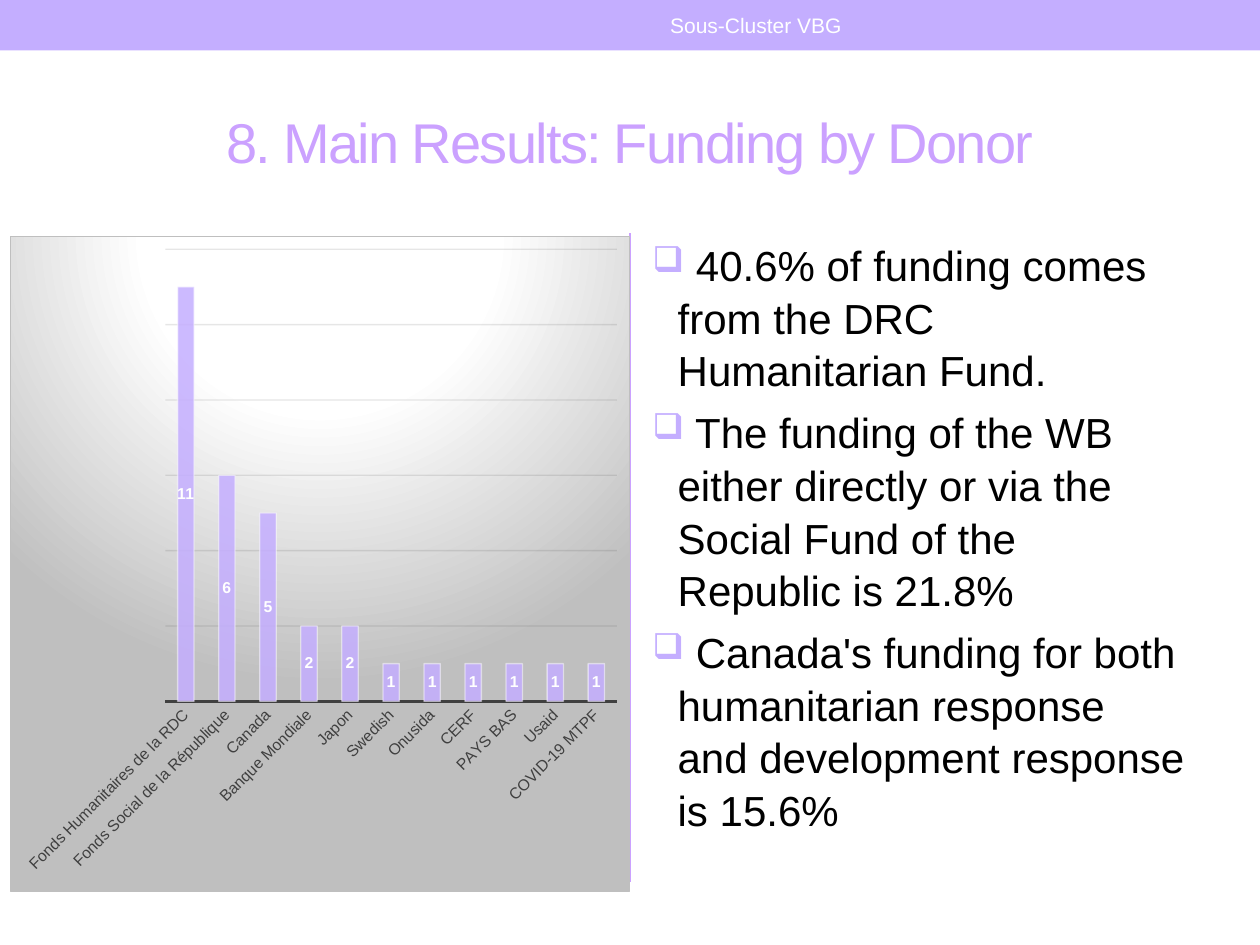
from lxml import etree
from pptx import Presentation
from pptx.chart.data import CategoryChartData
from pptx.dml.color import RGBColor
from pptx.enum.chart import XL_CHART_TYPE, XL_LABEL_POSITION, XL_TICK_MARK
from pptx.enum.shapes import MSO_CONNECTOR, MSO_SHAPE
from pptx.enum.text import MSO_ANCHOR, PP_ALIGN
from pptx.oxml import parse_xml
from pptx.oxml.ns import nsdecls, qn
from pptx.util import Inches, Pt

STACKED = XL_CHART_TYPE.COLUMN_STACKED
LABEL_CENTER = XL_LABEL_POSITION.CENTER
NO_TICK = XL_TICK_MARK.NONE
STRAIGHT = MSO_CONNECTOR.STRAIGHT
RECTANGLE = MSO_SHAPE.RECTANGLE
TOP, MIDDLE = MSO_ANCHOR.TOP, MSO_ANCHOR.MIDDLE
LEFT, CENTER = PP_ALIGN.LEFT, PP_ALIGN.CENTER

FONT = "Arial"
LILAC = RGBColor(0xC4, 0xAE, 0xFF)
VIOLET = RGBColor(0xCB, 0xA1, 0xFF)
WHITE = RGBColor(0xFF, 0xFF, 0xFF)
BLACK = RGBColor(0, 0, 0)
DARK_GREY = RGBColor(0x40, 0x40, 0x40)
GRID_GREY = RGBColor(0x0D, 0x0D, 0x0D)
SILVER = RGBColor(0xBF, 0xBF, 0xBF)

HEADER = "Sous-Cluster VBG"
TITLE = "8. Main Results: Funding by Donor"
FINDINGS = [
    " 40.6% of funding comes from the DRC Humanitarian Fund.",
    " The funding of the WB either directly or via the Social Fund of the Republic is 21.8%",
    " Canada's funding for both humanitarian response and development response is 15.6%",
]
DONORS = [
    ("Fonds Humanitaires de la RDC", 11),
    ("Fonds Social de la République", 6),
    ("Canada", 5),
    ("Banque Mondiale", 2),
    ("Japon", 2),
    ("Swedish", 1),
    ("Onusida", 1),
    ("CERF", 1),
    ("PAYS BAS", 1),
    ("Usaid", 1),
    ("COVID-19 MTPF", 1),
]
PLOT_LAYOUT = {"x": 0.25, "y": 0.02, "w": 0.73, "h": 0.69}


def set_font(font, size, color, bold=False):
    font.name, font.size, font.bold = FONT, Pt(size), bold
    font.color.rgb = color


def set_line(line, color, width):
    line.color.rgb = color
    line.width = Pt(width)


def set_alpha(properties, percent):
    color = properties.find(".//" + qn("a:srgbClr"))
    etree.SubElement(color, qn("a:alpha"), val=str(percent * 1000))


def add_text(page, area, texts, size, color, align=CENTER, anchor=MIDDLE):
    box = page.shapes.add_textbox(*map(Inches, area))
    frame = box.text_frame
    frame.word_wrap = True
    frame.vertical_anchor = anchor
    for index, text in enumerate(texts):
        para = frame.paragraphs[0] if index == 0 else frame.add_paragraph()
        para.alignment = align
        span = para.add_run()
        span.text = text
        set_font(span.font, size, color)
    return frame


def add_bullet(para):
    para.space_before = Pt(4.8)
    para.line_spacing = 1.05
    properties = para._p.get_or_add_pPr()
    properties.set("marL", str(Inches(0.2)))
    properties.set("indent", str(-Inches(0.2)))
    color = etree.SubElement(properties, qn("a:buClr"))
    etree.SubElement(color, qn("a:srgbClr"), val=str(LILAC))
    etree.SubElement(properties, qn("a:buSzPct"), val="85000")
    etree.SubElement(properties, qn("a:buChar"), char="❑")


def style_chart_area(chart):
    background = parse_xml(
        f'<c:spPr {nsdecls("c", "a")}><a:gradFill><a:gsLst>'
        f'<a:gs pos="0"><a:srgbClr val="{WHITE}"/></a:gs>'
        f'<a:gs pos="39000"><a:srgbClr val="{WHITE}"/></a:gs>'
        f'<a:gs pos="100000"><a:srgbClr val="{SILVER}"/></a:gs></a:gsLst>'
        '<a:path path="circle"><a:fillToRect l="50000" t="-80000" r="50000" b="180000"/></a:path>'
        f'</a:gradFill><a:ln w="{Pt(0.75)}"><a:solidFill><a:srgbClr val="{SILVER}"/>'
        '</a:solidFill></a:ln></c:spPr>'
    )
    chart_node = chart._chartSpace.find(qn("c:chart"))
    chart_node.addnext(background)

    plot_area = chart_node.find(qn("c:plotArea"))
    for old_layout in plot_area.findall(qn("c:layout")):
        plot_area.remove(old_layout)
    layout = etree.Element(qn("c:layout"))
    manual = etree.SubElement(layout, qn("c:manualLayout"))
    etree.SubElement(manual, qn("c:layoutTarget"), val="inner")
    for mode in ("xMode", "yMode"):
        etree.SubElement(manual, qn(f"c:{mode}"), val="edge")
    for side, share in PLOT_LAYOUT.items():
        etree.SubElement(manual, qn(f"c:{side}"), val=str(share))
    plot_area.insert(0, layout)


def add_donor_chart(page):
    data = CategoryChartData()
    data.categories = [name for name, count in DONORS]
    data.add_series("Series 1", [count for name, count in DONORS])
    area = map(Inches, (0.08, 1.87, 4.92, 5.21))
    chart = page.shapes.add_chart(STACKED, *area, data).chart
    chart.has_legend = False
    chart.has_title = False
    set_font(chart.font, 10, BLACK)
    style_chart_area(chart)

    donors = chart.category_axis
    donors.major_tick_mark = donors.minor_tick_mark = NO_TICK
    set_font(donors.tick_labels.font, 9, DARK_GREY)
    set_line(donors.format.line, DARK_GREY, 1.5)
    donors._element.find(qn("c:txPr")).find(qn("a:bodyPr")).set("rot", "-2700000")

    counts = chart.value_axis
    counts.minimum_scale, counts.maximum_scale, counts.major_unit = 0, 12, 2
    counts.visible = False
    counts.has_major_gridlines = True
    set_line(counts.major_gridlines.format.line, GRID_GREY, 0.75)
    set_alpha(counts._element.find(qn("c:majorGridlines")), 10)

    plot = chart.plots[0]
    plot.gap_width, plot.overlap = 150, 100
    plot.vary_by_categories = False
    bars = plot.series[0]
    bars.format.fill.solid()
    bars.format.fill.fore_color.rgb = LILAC
    set_line(bars.format.line, WHITE, 0.75)
    properties = bars._element.find(qn("c:spPr"))
    set_alpha(properties.find(qn("a:solidFill")), 85)
    set_alpha(properties.find(qn("a:ln")), 50)
    labels = bars.data_labels
    labels.show_value = True
    labels.position = LABEL_CENTER
    set_font(labels.font, 9, WHITE, bold=True)


def main():
    deck = Presentation()
    deck.slide_width, deck.slide_height = Inches(10), Inches(7.5)
    page = deck.slides.add_slide(deck.slide_layouts[6])

    band = page.shapes.add_shape(RECTANGLE, 0, 0, Inches(10), Inches(0.4))
    band.shadow.inherit = False
    band.fill.solid()
    band.fill.fore_color.rgb = LILAC
    band.line.fill.background()

    divider = page.shapes.add_connector(STRAIGHT, *map(Inches, (5, 1.85, 5, 7)))
    set_line(divider.line, VIOLET, 1.5)
    etree.SubElement(divider._element.spPr, qn("a:effectLst"))

    title = add_text(page, (0.5, 0.58, 9, 1.08), [TITLE], 32, VIOLET)
    title.paragraphs[0].runs[0].font._element.set("spc", "-100")
    add_text(page, (3.75, 0.02, 4.5, 0.36), [HEADER], 12, WHITE)
    add_donor_chart(page)
    findings = add_text(page, (5.08, 1.83, 4.42, 5.16), FINDINGS, 24, BLACK, LEFT, TOP)
    for para in findings.paragraphs:
        add_bullet(para)

    deck.save("out.pptx")


if __name__ == "__main__":
    main()
